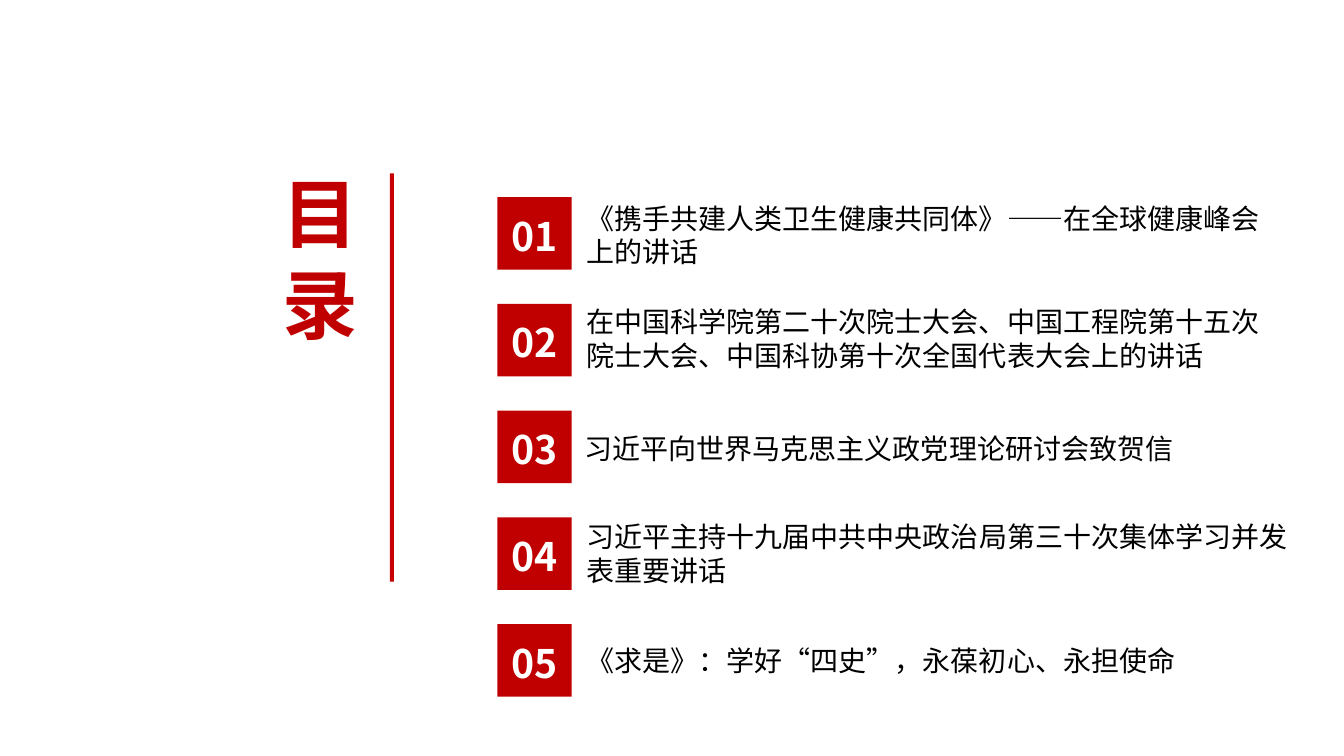
from pptx import Presentation
from pptx.dml.color import RGBColor
from pptx.enum.shapes import MSO_SHAPE
from pptx.enum.text import MSO_ANCHOR, MSO_AUTO_SIZE, PP_ALIGN
from pptx.oxml.ns import qn
from pptx.util import Pt
from lxml import etree

RECTANGLE = MSO_SHAPE.RECTANGLE
TOP, MIDDLE = MSO_ANCHOR.TOP, MSO_ANCHOR.MIDDLE
LEFT, CENTER = PP_ALIGN.LEFT, PP_ALIGN.CENTER
GROW = MSO_AUTO_SIZE.SHAPE_TO_FIT_TEXT

# Content: each entry has its text, then left, top, width and height
TITLE = "目录"
ENTRIES = [
    ("《携手共建人类卫生健康共同体》——在全球健康峰会上的讲话", (411.8, 139, 507, 55.2)),
    ("在中国科学院第二十次院士大会、中国工程院第十五次院士大会、中国科协第十次全国代表大会上的讲话",
     (411.8, 213, 507, 55.2)),
    ("习近平向世界马克思主义政党理论研讨会致贺信", (410.4, 303.2, 499, 31.2)),
    ("习近平主持十九届中共中央政治局第三十次集体学习并发表重要讲话", (411.8, 366.5, 522, 55.2)),
    ("《求是》：学好“四史”，永葆初心、永担使命", (411.8, 455, 507, 31.2)),
]

# Style and layout
FONT = "Noto Sans CJK SC"
RED, RULE_RED, BLACK, WHITE = "C00000", "C80000", "000000", "FFFFFF"
LINE_HEIGHT = 1.2
BADGE_LEFT, BADGE_TOP, BADGE_PITCH = 355.2, 140.8, 76.25
BADGE_WIDTH, BADGE_HEIGHT = 53.2, 51.8


def color(hex_string):
    return RGBColor.from_string(hex_string)


def write(shape, text, size, fill, bold=False, align=LEFT, anchor=TOP,
          insets=(7.2, 3.6), drop=0):
    """Write one paragraph, lowered by drop points within its box."""
    frame = shape.text_frame
    frame.word_wrap = True
    frame.vertical_anchor = anchor
    side, edge = insets
    frame.margin_left = frame.margin_right = Pt(side)
    frame.margin_top = Pt(edge + drop)
    frame.margin_bottom = Pt(max(edge - drop, 0))
    paragraph = frame.paragraphs[0]
    paragraph.alignment = align
    paragraph.line_spacing = Pt(size * LINE_HEIGHT)
    run = paragraph.add_run()
    run.text = text
    run.font.name = FONT
    run.font.size = Pt(size)
    run.font.bold = bold
    run.font.color.rgb = color(fill)
    east_asian = etree.SubElement(run.font._element, qn("a:ea"))
    east_asian.set("typeface", FONT)


def add_text(slide, box, *args, **style):
    shape = slide.shapes.add_textbox(*map(Pt, box))
    write(shape, *args, **style)
    shape.text_frame.auto_size = GROW


def add_block(slide, box, fill):
    shape = slide.shapes.add_shape(RECTANGLE, *map(Pt, box))
    shape.shadow.inherit = False
    shape.fill.solid()
    shape.fill.fore_color.rgb = color(fill)
    shape.line.fill.background()
    return shape


def main():
    presentation = Presentation()
    presentation.slide_width, presentation.slide_height = Pt(960), Pt(540)
    slide = presentation.slides.add_slide(presentation.slide_layouts[6])

    # Title and vertical rule
    add_text(slide, (196.6, 112.3, 86.4, 136), TITLE, 54, RED, bold=True,
             insets=(5, 3), drop=4)
    add_block(slide, (278.6, 123.8, 2.9, 291.6), RULE_RED)

    # Numbered entries
    for index, (text, box) in enumerate(ENTRIES):
        add_text(slide, box, text, 20, BLACK, drop=1.2)
        top = BADGE_TOP + index * BADGE_PITCH
        badge = add_block(slide, (BADGE_LEFT, top, BADGE_WIDTH, BADGE_HEIGHT), RED)
        write(badge, f"{index + 1:02d}", 28, WHITE, bold=True, align=CENTER,
              anchor=MIDDLE, drop=1.5)

    presentation.save("out.pptx")


if __name__ == "__main__":
    main()
